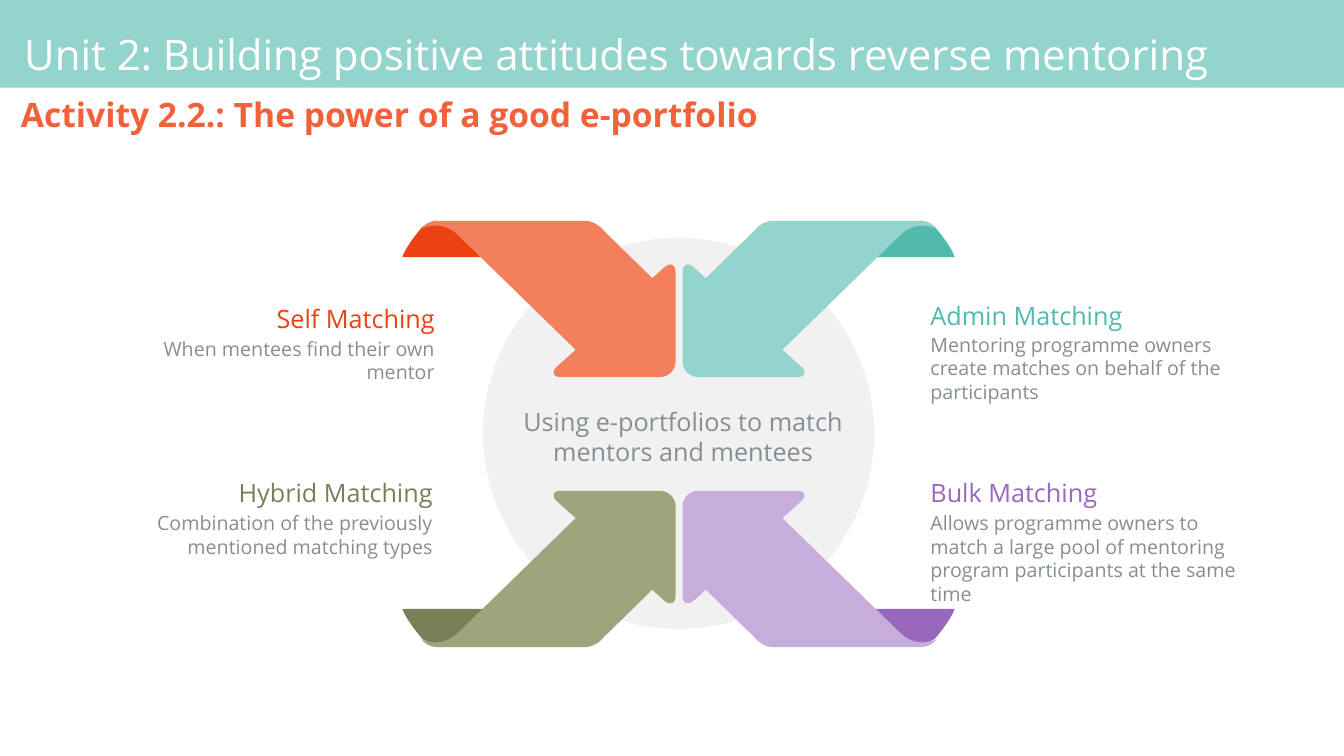
from dataclasses import dataclass

from lxml.etree import SubElement
from pptx import Presentation
from pptx.dml.color import RGBColor
from pptx.enum.shapes import MSO_SHAPE
from pptx.enum.text import MSO_ANCHOR, MSO_AUTO_SIZE, PP_ALIGN
from pptx.oxml.ns import qn
from pptx.util import Inches, Pt


@dataclass(frozen=True)
class Theme:
    font: str = "Open Sans"
    white: str = "FFFFFF"
    band: str = "93D4CC"
    accent: str = "F2613A"
    body: str = "868E93"
    disc: str = "7F7F7F"
    title_size: int = 30
    activity_size: int = 24
    heading_size: int = 18
    body_size: int = 14


@dataclass(frozen=True)
class Matching:
    heading: str
    description: str
    arrow_colour: str
    fold_colour: str
    on_right: bool
    at_bottom: bool
    text_left: float
    heading_top: float
    description_top: float
    description_height: float


MATCHINGS = [
    Matching("Self Matching", "When mentees find their own mentor",
             "F47F5D", "EC4110", False, False, 1.17, 2.96, 3.29, 0.57),
    Matching("Admin Matching",
             "Mentoring programme owners create matches on behalf of the participants",
             "93D4CC", "52BAAD", True, False, 9.13, 2.93, 3.25, 0.81),
    Matching("Hybrid Matching", "Combination of the previously mentioned matching types",
             "9DA57C", "788058", False, True, 1.15, 4.69, 5.02, 0.57),
    Matching("Bulk Matching",
             "Allows programme owners to match a large pool of mentoring program "
             "participants at the same time",
             "C7ADDB", "9868BD", True, True, 9.13, 4.69, 5.02, 1.04),
]

# Top-left outlines: a pair is a corner, six numbers are a cubic curve.
FOLD = [(3.99, 2.55), (4.79, 2.55), (4.77, 2.32), (4.58, 2.22), (4.31, 2.19),
        (4.19, 2.25), (4.19, 2.25, 4.04, 2.42, 3.99, 2.55)]
ARROW = [(6.59, 2.65), (6.47, 2.76), (5.99, 2.29),
         (5.99, 2.29, 5.91, 2.18, 5.78, 2.19), (4.36, 2.19),
         (4.36, 2.19, 4.24, 2.18, 4.18, 2.27),
         (4.18, 2.27, 4.36, 2.17, 4.53, 2.32), (5.71, 3.47), (5.52, 3.64),
         (5.47, 3.69, 5.48, 3.74, 5.56, 3.74), (6.55, 3.74),
         (6.63, 3.74, 6.7, 3.67, 6.7, 3.59), (6.7, 2.7),
         (6.7, 2.62, 6.65, 2.6, 6.59, 2.65)]
# Sums of mirrored coordinates: x' = sum - x, y' = sum - y.
ARROW_MIRROR = (13.47, 8.61)
FOLD_MIRROR = (13.46, 8.59)
TEXT_WIDTH = 3.24
HEADING_WIDTH = 2.19


class SlideBuilder:
    def __init__(self, slide, theme):
        self.slide = slide
        self.shapes = slide.shapes
        self.theme = theme

    def paint(self, shape, colour):
        shape.fill.solid()
        shape.fill.fore_color.rgb = RGBColor.from_string(colour)
        shape.line.fill.background()
        shape.shadow.inherit = False

    def preset(self, kind, left, top, width, height, colour):
        shape = self.shapes.add_shape(kind, Inches(left), Inches(top),
                                      Inches(width), Inches(height))
        self.paint(shape, colour)
        return shape

    def disc(self, left, top, diameter):
        disc = self.preset(MSO_SHAPE.OVAL, left, top, diameter, diameter, self.theme.disc)
        colour = disc.element.spPr.find(qn("a:solidFill"))[0]
        SubElement(colour, qn("a:alpha"), val="10000")

    def outline(self, steps, colour, mirror, matching):
        """Draw a top-left outline, mirrored into the quadrant of the matching."""
        def place(x, y):
            return (Inches(mirror[0] - x if matching.on_right else x),
                    Inches(mirror[1] - y if matching.at_bottom else y))

        corners = [place(*step[-2:]) for step in steps]
        builder = self.shapes.build_freeform(*corners[0], scale=1.0)
        builder.add_line_segments(corners[1:], close=False)
        shape = builder.convert_to_shape()
        segments = list(shape.element.iter(qn("a:lnTo")))
        for segment, step in zip(segments, steps[1:]):
            if len(step) == 6:
                controls = [place(*step[:2]), place(*step[2:4])]
                self.bend(segment, [(x - shape.left, y - shape.top) for x, y in controls])
        SubElement(segments[0].getparent(), qn("a:close"))
        self.paint(shape, colour)

    def bend(self, segment, controls):
        """Turn a straight segment into a cubic curve."""
        segment.tag = qn("a:cubicBezTo")
        for position, (x, y) in enumerate(controls):
            control = SubElement(segment, qn("a:pt"), x=str(x), y=str(y))
            segment.insert(position, control)

    def format_text(self, shape, text, size, colour, align=PP_ALIGN.LEFT,
                    bold=False, spacing=None, auto_size=MSO_AUTO_SIZE.NONE):
        frame = shape.text_frame
        frame.text = text
        frame.word_wrap = True
        frame.auto_size = auto_size
        frame.vertical_anchor = MSO_ANCHOR.TOP
        paragraph = frame.paragraphs[0]
        paragraph.alignment = align
        paragraph.line_spacing = spacing
        paragraph.font.name = self.theme.font
        paragraph.font.size = Pt(size)
        paragraph.font.bold = bold
        paragraph.font.color.rgb = RGBColor.from_string(colour)

    def title(self, text, left, top, width, height):
        """Format the title and bring it in front of what is drawn so far."""
        title = self.shapes.title
        title.element.getparent().append(title.element)
        title.left, title.top = Inches(left), Inches(top)
        title.width, title.height = Inches(width), Inches(height)
        self.format_text(title, text, self.theme.title_size, self.theme.white, spacing=0.9)

    def text(self, text, left, top, width, height, size, colour, group=None, **style):
        shapes = group.shapes if group else self.shapes
        box = shapes.add_textbox(Inches(left), Inches(top), Inches(width), Inches(height))
        self.format_text(box, text, size, colour, **style)

    def caption(self, matching):
        theme = self.theme
        left = matching.text_left
        indent = 0 if matching.on_right else TEXT_WIDTH - HEADING_WIDTH
        style = dict(group=self.shapes.add_group_shape(),
                     auto_size=MSO_AUTO_SIZE.SHAPE_TO_FIT_TEXT,
                     align=PP_ALIGN.LEFT if matching.on_right else PP_ALIGN.RIGHT)
        self.text(matching.description, left, matching.description_top, TEXT_WIDTH,
                  matching.description_height, theme.body_size, theme.body, **style)
        self.text(matching.heading, left + indent, matching.heading_top, HEADING_WIDTH,
                  0.4, theme.heading_size, matching.fold_colour, **style)


def main():
    presentation = Presentation()
    presentation.slide_width = Inches(13.33)
    presentation.slide_height = Inches(7.5)
    theme = Theme()
    slide = presentation.slides.add_slide(presentation.slide_layouts[5])
    builder = SlideBuilder(slide, theme)

    builder.preset(MSO_SHAPE.RECTANGLE, 0, 0, 13.33, 0.87, theme.band)
    builder.disc(4.79, 2.36, 3.88)
    for matching in MATCHINGS:
        builder.outline(FOLD, matching.fold_colour, FOLD_MIRROR, matching)
    for matching in MATCHINGS:
        builder.outline(ARROW, matching.arrow_colour, ARROW_MIRROR, matching)
    builder.text("Using e-portfolios to match mentors and mentees", 5.08, 3.98, 3.39, 0.71,
                 theme.heading_size, theme.body, align=PP_ALIGN.CENTER,
                 auto_size=MSO_AUTO_SIZE.SHAPE_TO_FIT_TEXT)
    for matching in MATCHINGS:
        builder.caption(matching)
    builder.title("Unit 2: Building positive attitudes towards reverse mentoring",
                  0.14, 0.29, 13.06, 0.78)
    builder.text("Activity 2.2.: The power of a good e-portfolio", 0.11, 0.93, 13.06, 0.6,
                 theme.activity_size, theme.accent, align=PP_ALIGN.JUSTIFY,
                 bold=True, spacing=0.9)

    presentation.save("out.pptx")


if __name__ == "__main__":
    main()
